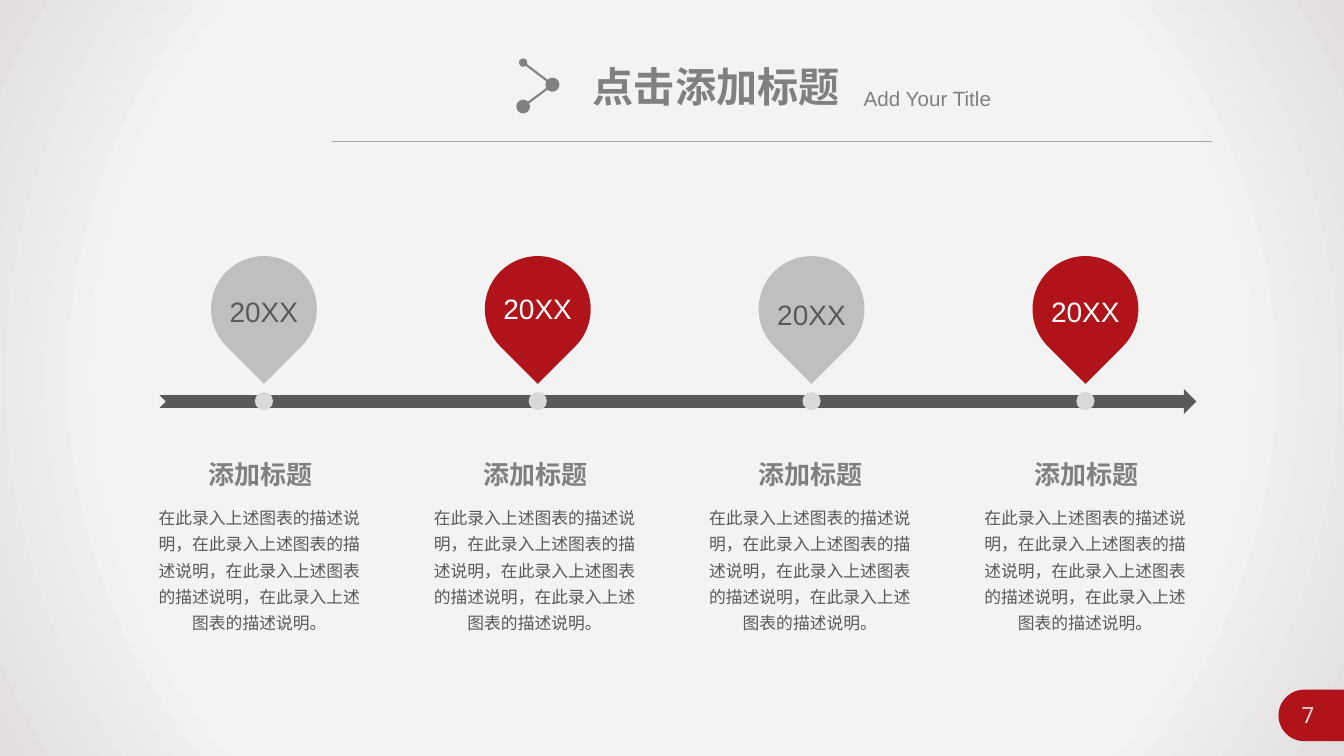
from dataclasses import dataclass

import pptx
import pptx.dml.color
import pptx.enum.dml
import pptx.enum.shapes
import pptx.enum.text
import pptx.oxml
import pptx.oxml.ns
import pptx.util
from lxml import etree

Pt = pptx.util.Pt
RGBColor = pptx.dml.color.RGBColor
SHAPE = pptx.enum.shapes.MSO_SHAPE
ALIGN = pptx.enum.text.PP_ALIGN
qn = pptx.oxml.ns.qn

RED = RGBColor(0xB0, 0x13, 0x19)
WHITE = RGBColor(0xFF, 0xFF, 0xFF)
DARK = RGBColor(0x59, 0x59, 0x59)
GREY = RGBColor(0x80, 0x80, 0x80)
RULE_GREY = RGBColor(0xA6, 0xA6, 0xA6)
PIN_GREY = RGBColor(0xBF, 0xBF, 0xBF)
PALE = RGBColor(0xD9, 0xD9, 0xD9)

LATIN = "Arial"
CHINESE = "Noto Sans CJK SC"
MONO = "Noto Sans Mono"

WIDTH, HEIGHT = 960, 540
BACKDROP_STOPS = ((0, "F5F5F5"), (73, "F3F3F3"), (100, "E2DEDF"))
DESCRIPTION = "，".join(["在此录入上述图表的描述说明"] * 4) + "。"
FIRST_PIN, PIN_PITCH, PIN_SIZE = 188.5, 195.6, 75.6
FIRST_CAPTION, CAPTION_PITCH = 185.5, 196.6


@dataclass(frozen=True)
class Frame:
    left: float
    top: float
    width: float
    height: float

    def lengths(self) -> tuple:
        return Pt(self.left), Pt(self.top), Pt(self.width), Pt(self.height)


@dataclass(frozen=True)
class TextStyle:
    size: float
    color: RGBColor
    latin: str = LATIN
    bold: bool = False
    align: ALIGN = ALIGN.CENTER
    spacing: float = 1.0
    wrap: bool = True


@dataclass(frozen=True)
class Milestone:
    fill: RGBColor
    year_top: float
    year_style: TextStyle


GREY_YEAR = TextStyle(20, DARK, spacing=1.2)
RED_YEAR = TextStyle(20, WHITE)
MILESTONES = (
    Milestone(PIN_GREY, 202.3, GREY_YEAR),
    Milestone(RED, 204.5, RED_YEAR),
    Milestone(PIN_GREY, 204.5, GREY_YEAR),
    Milestone(RED, 206.6, RED_YEAR),
)
HEADING = TextStyle(18.6, GREY, CHINESE, bold=True, wrap=False)
BODY = TextStyle(12, DARK, CHINESE, spacing=1.3)
TITLE = TextStyle(29.4, GREY, bold=True, align=ALIGN.LEFT, wrap=False)
SUBTITLE = TextStyle(14.7, GREY, align=ALIGN.LEFT)
PAGE_NUMBER = TextStyle(16, PALE, MONO)


def write(box, text: str, style: TextStyle) -> None:
    frame = box.text_frame
    frame.word_wrap = style.wrap
    frame.auto_size = pptx.enum.text.MSO_AUTO_SIZE.NONE
    frame.vertical_anchor = pptx.enum.text.MSO_ANCHOR.TOP
    para = frame.paragraphs[0]
    para.alignment = style.align
    para.line_spacing = style.spacing
    span = para.add_run()
    span.text = text
    span.font.size = Pt(style.size)
    span.font.bold = style.bold
    span.font.color.rgb = style.color
    span.font.name = style.latin
    east_asian = etree.SubElement(span.font._element, qn("a:ea"))
    east_asian.set("typeface", CHINESE)


def add_text(shapes, frame: Frame, text: str, style: TextStyle) -> None:
    write(shapes.add_textbox(*frame.lengths()), text, style)


def add_solid(shapes, kind: SHAPE, frame: Frame, color: RGBColor, rotation: float = 0):
    shape = shapes.add_shape(kind, *frame.lengths())
    shape.shadow.inherit = False
    shape.fill.solid()
    shape.fill.fore_color.rgb = color
    shape.line.fill.background()
    shape.rotation = rotation
    return shape


def add_line(shapes, start: tuple, end: tuple, color: RGBColor, width: float):
    line = shapes.add_connector(
        pptx.enum.shapes.MSO_CONNECTOR.STRAIGHT, *map(Pt, start + end))
    line.line.color.rgb = color
    line.line.width = Pt(width)
    etree.SubElement(line._element.spPr, qn("a:effectLst"))
    return line


def add_round_end(line, tag: str, size: str) -> None:
    end = etree.SubElement(line.line._get_or_add_ln(), qn(tag))
    end.set("type", "oval")
    end.set("w", size)
    end.set("len", size)


def add_backdrop(shapes) -> None:
    """Full-page radial gradient, placed behind everything else."""
    backdrop = add_solid(shapes, SHAPE.RECTANGLE, Frame(0, 0, WIDTH, HEIGHT), WHITE)
    stops = "".join(
        f'<a:gs pos="{percent * 1000}"><a:srgbClr val="{color}"/></a:gs>'
        for percent, color in BACKDROP_STOPS)
    gradient = pptx.oxml.parse_xml(
        f'<a:gradFill {pptx.oxml.ns.nsdecls("a")} rotWithShape="1">'
        f'<a:gsLst>{stops}</a:gsLst><a:path path="circle">'
        '<a:fillToRect l="50000" t="50000" r="50000" b="50000"/>'
        '</a:path></a:gradFill>')
    properties = backdrop._element.spPr
    properties.replace(properties.find(qn("a:solidFill")), gradient)
    shapes._spTree.insert(2, backdrop._element)


def add_header(page) -> None:
    title = page.shapes.title
    title.left, title.top, title.width, title.height = Frame(
        416.2, 40.3, 192.2, 42.5).lengths()
    write(title, "点击添加标题", TITLE)
    add_text(page.shapes, Frame(609.8, 57.6, 181.4, 25.2), "Add Your Title", SUBTITLE)
    add_line(page.shapes, (236.9, 100.8), (865.4, 100.8), RULE_GREY, 0.5)
    icon = page.shapes.add_group_shape()
    top, elbow, bottom = (373.7, 44.7), (394.6, 60.5), (373.7, 76.1)
    for start, end, head_size in ((top, elbow, "med"), (elbow, bottom, "lg")):
        stroke = add_line(icon.shapes, start, end, GREY, 1.5)
        add_round_end(stroke, "a:headEnd", head_size)
        add_round_end(stroke, "a:tailEnd", "lg")


def add_page_tab(shapes) -> None:
    """Red tab at the right edge: a half-rounded rectangle turned to the left."""
    length, thickness = 46.8, 36.8
    middle_x, middle_y = WIDTH - length / 2, 511
    tab = add_solid(
        shapes, SHAPE.ROUND_2_SAME_RECTANGLE,
        Frame(middle_x - thickness / 2, middle_y - length / 2, thickness, length),
        RED, 270)
    tab.adjustments[0] = 0.5
    add_text(shapes, Frame(910.4, 497.5, 47.5, 26.6), "7", PAGE_NUMBER)


def add_milestone(shapes, index: int, milestone: Milestone) -> None:
    center = FIRST_PIN + index * PIN_PITCH
    add_solid(shapes, SHAPE.OVAL, Frame(center - 6.5, 280, 13, 13), PALE)
    pin = shapes.add_group_shape()
    add_solid(pin.shapes, SHAPE.TEAR,
              Frame(center - PIN_SIZE / 2, 182.9, PIN_SIZE, PIN_SIZE),
              milestone.fill, 135)
    add_text(pin.shapes, Frame(center - 33, milestone.year_top, 66, 34),
             "20XX", milestone.year_style)
    caption = FIRST_CAPTION + index * CAPTION_PITCH
    add_text(shapes, Frame(caption - 44.5, 324, 90, 30.2), "添加标题", HEADING)
    add_text(shapes, Frame(caption - 85.2, 355, 170, 101.5), DESCRIPTION, BODY)


def main() -> None:
    deck = pptx.Presentation()
    deck.slide_width, deck.slide_height = Pt(WIDTH), Pt(HEIGHT)
    page = deck.slides.add_slide(deck.slide_layouts[5])
    add_backdrop(page.shapes)
    add_header(page)
    add_page_tab(page.shapes)
    add_solid(page.shapes, SHAPE.NOTCHED_RIGHT_ARROW, Frame(114, 277.8, 740.6, 18), DARK)
    for index, milestone in enumerate(MILESTONES):
        add_milestone(page.shapes, index, milestone)
    deck.save("out.pptx")


if __name__ == "__main__":
    main()
